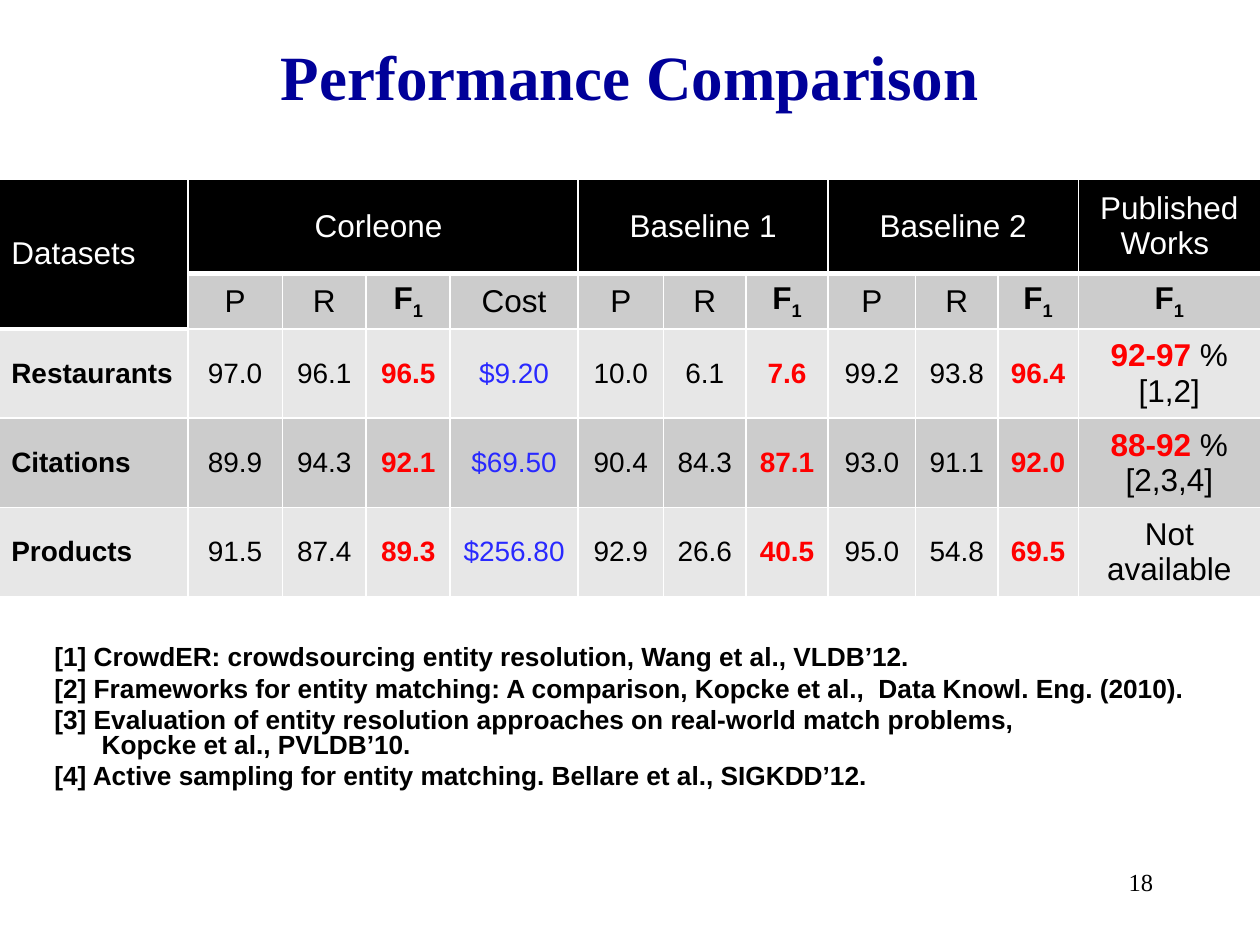
from dataclasses import dataclass

from lxml import etree
from pptx import Presentation
from pptx.dml.color import RGBColor
from pptx.enum.text import MSO_ANCHOR, PP_ALIGN
from pptx.oxml.ns import qn
from pptx.util import Pt

LEFT, CENTER, RIGHT = PP_ALIGN.LEFT, PP_ALIGN.CENTER, PP_ALIGN.RIGHT
TOP, MIDDLE, BOTTOM = MSO_ANCHOR.TOP, MSO_ANCHOR.MIDDLE, MSO_ANCHOR.BOTTOM


@dataclass(frozen=True)
class Theme:
    sans: str = "Arial"
    serif: str = "Times New Roman"
    black: str = "000000"
    white: str = "FFFFFF"
    title_blue: str = "000099"
    cost_blue: str = "2929FF"
    red: str = "FF0000"
    light: str = "E7E7E7"
    dark: str = "CCCCCC"
    title_size: int = 36
    head_size: int = 18
    body_size: int = 16
    ref_size: int = 15
    number_size: int = 14


THEME = Theme()


def write(p, text, font=THEME.sans, size=THEME.head_size, color=THEME.black,
          bold=False, baseline=0):
    """Add text to a paragraph; a newline becomes a line break."""
    for i, line in enumerate(text.split("\n")):
        if i:
            p.add_line_break()
        r = p.add_run()
        r.text = line
        r.font.name, r.font.size, r.font.bold = font, Pt(size), bold
        r.font.color.rgb = RGBColor.from_string(color)
        if baseline:
            r.font._element.set("baseline", str(baseline * 1000))


class SlideBuilder:
    def __init__(self, slide, theme):
        self.s, self.theme = slide, theme

    def text_box(self, box, lines, align=LEFT, anchor=TOP, hanging=0,
                 spacing=None, before=0, **fmt):
        tf = self.s.shapes.add_textbox(*map(Pt, box)).text_frame
        tf.word_wrap, tf.vertical_anchor = True, anchor
        for i, line in enumerate(lines):
            p = tf.add_paragraph() if i else tf.paragraphs[0]
            p.alignment = align
            if spacing:
                p.line_spacing, p.space_before = spacing, Pt(before)
            if hanging:
                pPr = p._p.get_or_add_pPr()
                pPr.set("marL", str(Pt(hanging)))
                pPr.set("indent", str(-Pt(hanging)))
            write(p, line, **fmt)
        return tf

    def table(self, left, top, widths, heights):
        tbl = self.s.shapes.add_table(
            len(heights), len(widths), Pt(left), Pt(top),
            Pt(sum(widths)), Pt(sum(heights))).table
        tbl.first_row = tbl.horz_banding = False
        for col, width in zip(tbl.columns, widths):
            col.width = Pt(width)
        for row, height in zip(tbl.rows, heights):
            row.height = Pt(height)
        return tbl

    def cell(self, cell, runs, fill, align=CENTER, bottom=1):
        """Fill a cell with (text, format) runs and rule it in white."""
        cell.vertical_anchor = MIDDLE
        p = cell.text_frame.paragraphs[0]
        p.alignment = align
        for text, fmt in runs:
            write(p, text, **fmt)
        tcPr = cell._tc.get_or_add_tcPr()
        for side, width in (("L", 1), ("R", 1), ("T", 1), ("B", bottom)):
            ln = etree.SubElement(tcPr, qn(f"a:ln{side}"), w=str(Pt(width)))
            solid = etree.SubElement(ln, qn("a:solidFill"))
            etree.SubElement(solid, qn("a:srgbClr"), val=self.theme.white)
        cell.fill.solid()
        cell.fill.fore_color.rgb = RGBColor.from_string(fill)


WIDTHS = [108, 54, 48, 48, 73, 49, 47, 47, 50, 47, 46, 104]
HEIGHTS = [54, 29.5, 51, 51, 51]
# text, first column, last column, last row
GROUPS = [("Datasets", 0, 0, 1), ("Corleone ", 1, 4, 0), ("Baseline 1", 5, 7, 0),
          ("Baseline 2", 8, 10, 0), ("Published Works ", 11, 11, 0)]
MEASURES = ["P", "R", "F1", "Cost", "P", "R", "F1", "P", "R", "F1", "F1"]
RESULTS = [
    ("Restaurants", "97.0 96.1 96.5 $9.20 10.0 6.1 7.6 99.2 93.8 96.4",
     "92-97", " % [1,2]"),
    ("Citations", "89.9 94.3 92.1 $69.50 90.4 84.3 87.1 93.0 91.1 92.0",
     "88-92", " % [2,3,4]"),
    ("Products", "91.5 87.4 89.3 $256.80 92.9 26.6 40.5 95.0 54.8 69.5",
     "", "Not available"),
]
REFERENCES = [
    "[1] CrowdER: crowdsourcing entity resolution, Wang et al., VLDB’12.",
    "[2] Frameworks for entity matching: A comparison, Kopcke et al., "
    " Data Knowl. Eng. (2010).",
    "[3] Evaluation of entity resolution approaches on real-world match "
    "problems,\nKopcke et al., PVLDB’10.",
    "[4] Active sampling for entity matching. Bellare et al., SIGKDD’12.",
]


def add_results(b):
    t = b.theme
    tbl = b.table(-0.7, 102.2, WIDTHS, HEIGHTS)
    for text, first, last, last_row in GROUPS:
        origin = tbl.cell(0, first)
        if (last_row, last) != (0, first):
            origin.merge(tbl.cell(last_row, last))
        b.cell(origin, [(text, {"color": t.white})], t.black,
               LEFT if first == 0 else CENTER, bottom=3)

    strong = {"bold": True}
    for col, name in enumerate(MEASURES, 1):
        runs = [(name, {})]
        if name == "F1":
            runs = [("F", strong), ("1", {"bold": True, "baseline": -25})]
        b.cell(tbl.cell(1, col), runs, t.dark)

    styles = {"F1": {"color": t.red, "bold": True}, "Cost": {"color": t.cost_blue}}
    for row, (dataset, values, score, note) in enumerate(RESULTS, 2):
        fill = t.dark if row % 2 else t.light
        b.cell(tbl.cell(row, 0), [(dataset, {"size": t.body_size, "bold": True})],
               fill, LEFT)
        for col, (value, name) in enumerate(zip(values.split(), MEASURES), 1):
            fmt = {"size": t.body_size, **styles.get(name, {})}
            b.cell(tbl.cell(row, col), [(value, fmt)], fill)
        published = [(score, styles["F1"])] if score else []
        b.cell(tbl.cell(row, 11), published + [(note, {})], fill)


def main():
    prs = Presentation()
    prs.slide_width, prs.slide_height = Pt(720), Pt(540)
    b = SlideBuilder(prs.slides.add_slide(prs.slide_layouts[6]), THEME)
    t = b.theme

    title = b.text_box((54, 18, 612, 54), ["Performance Comparison"], CENTER, BOTTOM,
                       font=t.serif, size=t.title_size, color=t.title_blue, bold=True)
    title.margin_top = title.margin_bottom = Pt(7.2)
    add_results(b)
    b.text_box((516, 492, 150, 36), ["18"], RIGHT, font=t.serif, size=t.number_size)
    b.text_box((24, 366, 684, 96), REFERENCES, hanging=27, spacing=0.8, before=3.4,
               size=t.ref_size, bold=True)
    prs.save("out.pptx")


if __name__ == "__main__":
    main()
